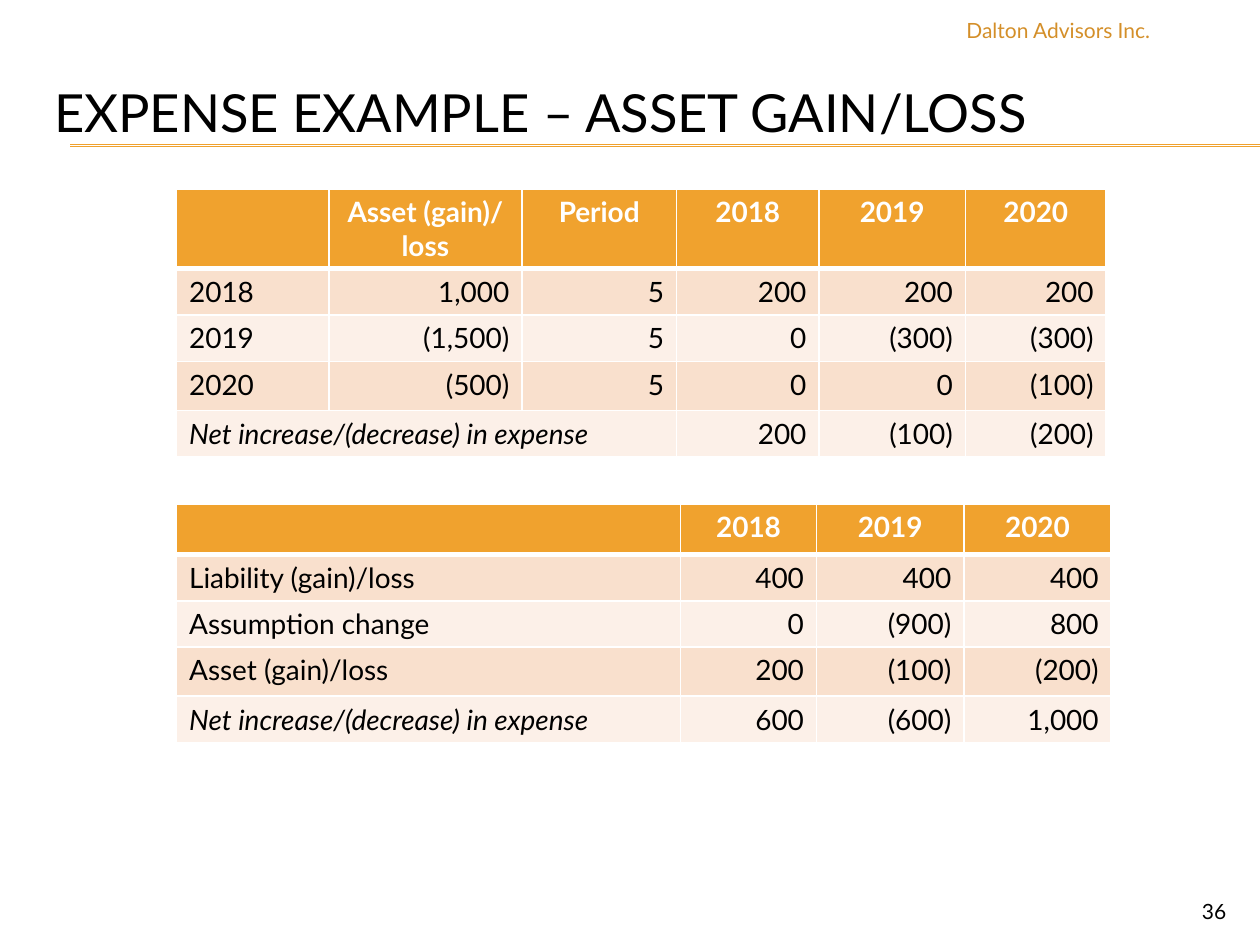
"""Build the asset gain/loss expense example slide."""
from dataclasses import dataclass

import lxml.etree
import pptx
import pptx.dml.color
import pptx.enum.shapes
import pptx.enum.text
import pptx.oxml.ns
import pptx.util

Cm = pptx.util.Cm
Pt = pptx.util.Pt
Align = pptx.enum.text.PP_ALIGN
Anchor = pptx.enum.text.MSO_ANCHOR
qn = pptx.oxml.ns.qn


@dataclass(frozen=True)
class Theme:
    font: str = "Lato"
    accent: str = "F0A22E"
    firm: str = "D48F29"
    ink: str = "000000"
    paper: str = "FFFFFF"
    bands: tuple = ("F9E0CD", "FCF0E8")
    title_size: int = 30
    table_size: int = 16
    small_size: int = 12
    rule_width: float = 0.75
    grid_width: int = 1
    header_rule_width: int = 3


THEME = Theme()
ROW_HEIGHTS = (1.02, 0.92, 0.92, 0.99, 0.92)
TABLE_LEFT = 3.56
NET_LABEL = "Net increase/(decrease) in expense"
YEARS = ("2018", "2019", "2020")


def rgb(colour):
    return pptx.dml.color.RGBColor.from_string(colour)


def write(frame, text, size, colour, align, bold=False, italic=False):
    paragraph = frame.paragraphs[0]
    paragraph.text = text
    paragraph.alignment = align
    for run in paragraph.runs:
        run.font.name = THEME.font
        run.font.size = Pt(size)
        run.font.color.rgb = rgb(colour)
        run.font.bold = bold
        run.font.italic = italic


def add_label(slide, text, box, size, colour, align=Align.RIGHT, anchor=Anchor.TOP):
    frame = slide.shapes.add_textbox(*map(Cm, box)).text_frame
    frame.word_wrap = True
    frame.vertical_anchor = anchor
    write(frame, text, size, colour, align)


def add_title_rule(slide, y):
    rule = slide.shapes.add_connector(
        pptx.enum.shapes.MSO_CONNECTOR.STRAIGHT, Cm(1.42), Cm(y), Cm(25.4), Cm(y))
    rule.line.color.rgb = rgb(THEME.accent)
    rule.line.width = Pt(THEME.rule_width)
    lxml.etree.SubElement(rule.element.spPr, qn("a:effectLst"))


def set_borders(cell, bottom_width):
    properties = cell._tc.get_or_add_tcPr()
    widths = {"lnL": THEME.grid_width, "lnR": THEME.grid_width,
              "lnT": THEME.grid_width, "lnB": bottom_width}
    for position, (side, width) in enumerate(widths.items()):
        border = lxml.etree.Element(qn(f"a:{side}"), w=str(Pt(width)))
        fill = lxml.etree.SubElement(border, qn("a:solidFill"))
        lxml.etree.SubElement(fill, qn("a:srgbClr"), val=THEME.paper)
        properties.insert(position, border)


def style_cell(cell, text, row, column):
    is_header = row == 0
    cell.fill.solid()
    cell.fill.fore_color.rgb = rgb(THEME.accent if is_header else THEME.bands[(row - 1) % 2])
    set_borders(cell, THEME.header_rule_width if is_header else THEME.grid_width)
    if text:
        body_align = Align.RIGHT if column else Align.LEFT
        write(cell.text_frame, text, THEME.table_size,
              THEME.paper if is_header else THEME.ink,
              Align.CENTER if is_header else body_align,
              bold=is_header, italic=text == NET_LABEL)


def add_expense_table(slide, top, column_widths, entries):
    table = slide.shapes.add_table(
        len(entries), len(column_widths), Cm(TABLE_LEFT), Cm(top),
        Cm(sum(column_widths)), Cm(sum(ROW_HEIGHTS))).table
    for column, width in zip(table.columns, column_widths):
        column.width = Cm(width)
    for row, height in zip(table.rows, ROW_HEIGHTS):
        row.height = Cm(height)
    for row, texts in enumerate(entries):
        for column, text in enumerate(texts):
            style_cell(table.cell(row, column), text, row, column)
    return table


def main():
    deck = pptx.Presentation()
    deck.slide_width, deck.slide_height = Cm(25.4), Cm(19.05)
    slide = deck.slides.add_slide(deck.slide_layouts[6])

    for y in (2.92, 2.95):
        add_title_rule(slide, y)
    add_label(slide, "EXPENSE EXAMPLE – ASSET GAIN/LOSS", (0.84, 1.07, 24.13, 2.34),
              THEME.title_size, THEME.ink, Align.LEFT, Anchor.MIDDLE)
    add_label(slide, "Dalton Advisors Inc.", (15.39, 0.23, 8.05, 0.81),
              THEME.small_size, THEME.firm)
    add_label(slide, "36", (22.86, 17.98, 2.11, 0.69), THEME.small_size, THEME.ink)

    asset_table = add_expense_table(slide, 3.81, (3.07, 3.89, 3.12, 2.87, 2.95, 2.84), (
        ("", "Asset (gain)/\nloss", "Period", *YEARS),
        ("2018", "1,000", "5", "200", "200", "200"),
        ("2019", "(1,500)", "5", "0", "(300)", "(300)"),
        ("2020", "(500)", "5", "0", "0", "(100)"),
        (NET_LABEL, "", "", "200", "(100)", "(200)"),
    ))
    asset_table.cell(4, 0).merge(asset_table.cell(4, 2))

    add_expense_table(slide, 10.16, (10.16, 2.74, 2.97, 2.97), (
        ("", *YEARS),
        ("Liability (gain)/loss", "400", "400", "400"),
        ("Assumption change", "0", "(900)", "800"),
        ("Asset (gain)/loss", "200", "(100)", "(200)"),
        (NET_LABEL, "600", "(600)", "1,000"),
    ))
    deck.save("out.pptx")


if __name__ == "__main__":
    main()
